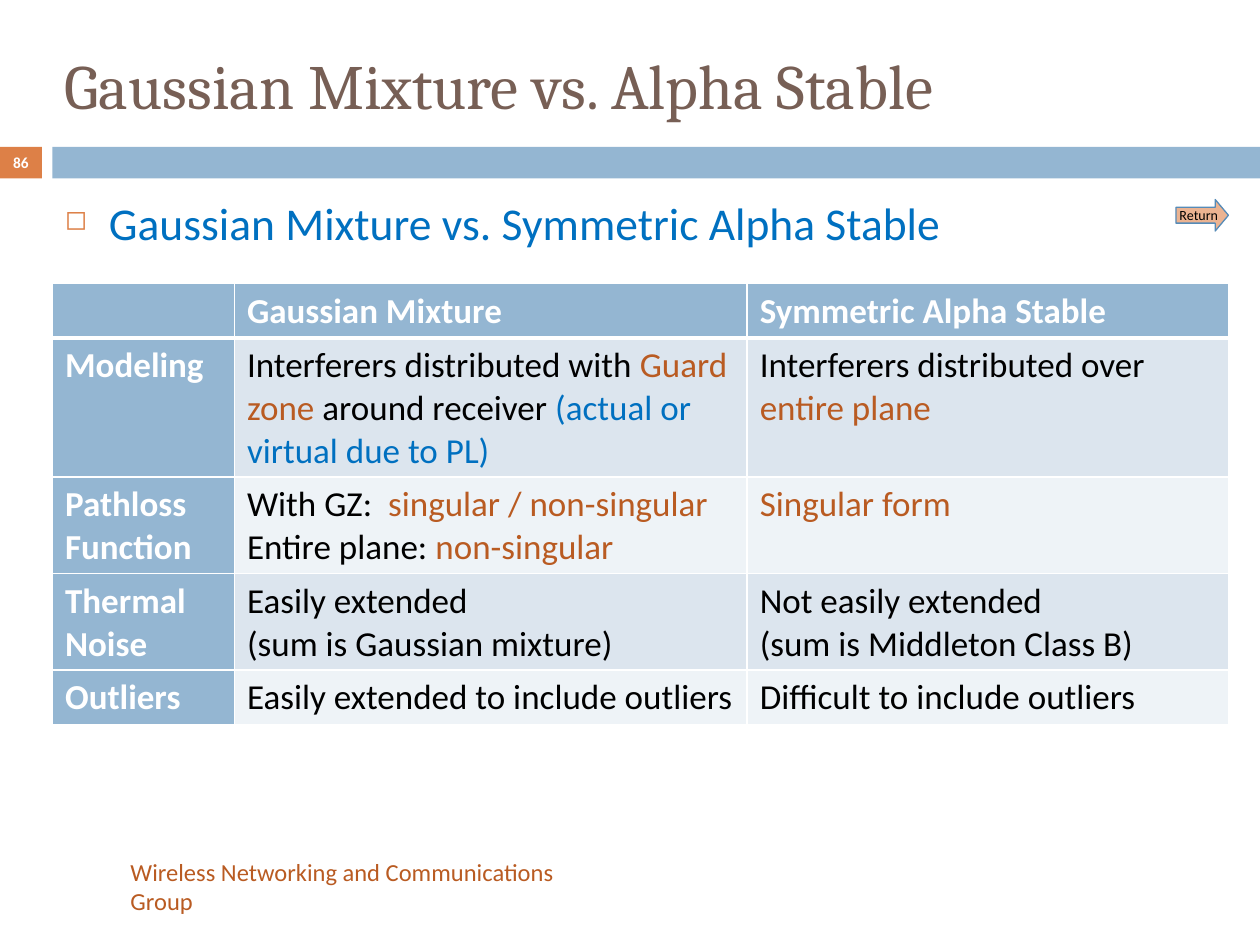
from dataclasses import dataclass

from lxml.etree import SubElement
from pptx import Presentation
from pptx.dml.color import RGBColor as RGB
from pptx.enum.shapes import MSO_SHAPE as SHAPE
from pptx.enum.text import MSO_ANCHOR as ANCHOR, PP_ALIGN as ALIGN
from pptx.oxml import parse_xml
from pptx.oxml.ns import nsdecls, qn
from pptx.util import Pt


@dataclass(frozen=True)
class Theme:
    head_font: str = "Cambria"
    body_font: str = "Calibri"
    title: str = "775F55"
    white: str = "FFFFFF"
    black: str = "000000"
    blue: str = "0070C0"
    rust: str = "B95B22"
    orange: str = "DD8047"
    bar: str = "94B6D2"
    bands: tuple = ("DCE5EE", "EEF3F7")
    arrow: str = "EBB391"
    arrow_line: str = "558BB8"
    title_size: float = 36
    body_size: float = 26
    table_size: float = 20
    footer_size: float = 14
    number_size: float = 8.8
    return_size: float = 8


T = Theme()

COLUMNS = (104, 293, 275)
ROW_HEIGHT = 29.5
ROWS = [
    ["", "Gaussian Mixture", "Symmetric Alpha Stable"],
    ["Modeling",
     [["Interferers distributed with ", ("Guard zone ", T.rust),
       "around receiver ", ("(actual or virtual due to PL)", T.blue)]],
     [["Interferers distributed over ", ("entire plane", T.rust)]]],
    ["Pathloss Function",
     [["With GZ:  ", ("singular / non-singular", T.rust)],
      ["Entire plane: ", ("non-singular", T.rust)]],
     [[("Singular form", T.rust)]]],
    ["Thermal Noise",
     "Easily extended\v(sum is Gaussian mixture)",
     "Not easily extended\v(sum is Middleton Class B)"],
    ["Outliers", "Easily extended to include outliers",
     "Difficult to include outliers"],
]


def write(p, runs, size, color, bold=False, font=T.body_font):
    p.font.name = font
    p.font.size = Pt(size)
    p.font.bold = bold
    p.font.color.rgb = RGB.from_string(color)
    for item in runs:
        text, tint = (item, None) if isinstance(item, str) else item
        for i, line in enumerate(text.split("\v")):
            if i:
                p.add_line_break()
            r = p.add_run()
            r.text = line
            if tint:
                r.font.color.rgb = RGB.from_string(tint)


def add_text(s, box, text, size, color, anchor=ANCHOR.MIDDLE, inset=7.2, **style):
    tf = s.shapes.add_textbox(*map(Pt, box)).text_frame
    tf.word_wrap = True
    tf.vertical_anchor = anchor
    tf.margin_left = tf.margin_right = Pt(inset)
    p = tf.paragraphs[0]
    write(p, [text], size, color, **style)
    return p


def add_block(s, kind, box, fill, line=None):
    sp = s.shapes.add_shape(kind, *map(Pt, box))
    sp.shadow.inherit = False
    sp.fill.solid()
    sp.fill.fore_color.rgb = RGB.from_string(fill)
    if line:
        sp.line.color.rgb = RGB.from_string(line)
        sp.line.width = Pt(0.75)
    else:
        sp.line.fill.background()
    return sp


def add_bullet(s, box, text):
    p = add_text(s, box, "", T.body_size, T.blue, ANCHOR.TOP)
    p.clear()
    pPr = p._p.get_or_add_pPr()
    pPr.set("marL", str(Pt(25.2)))
    pPr.set("indent", str(-Pt(25.2)))
    bullet = (("buClr", f'<a:srgbClr val="{T.orange}"/>', ""),
              ("buSzPct", "", 'val="60000"'),
              ("buChar", "", 'char="◻"'))
    for i, (tag, inner, attrs) in enumerate(bullet):
        pPr.insert(i, parse_xml(
            f'<a:{tag} {nsdecls("a")} {attrs}>{inner}</a:{tag}>'))
    write(p, [text], T.body_size, T.blue)


def set_borders(cell, top, bottom):
    tcPr = cell._tc.get_or_add_tcPr()
    widths = {"lnL": 1, "lnR": 1, "lnT": top, "lnB": bottom}
    for i, (side, width) in enumerate(widths.items()):
        ln = SubElement(tcPr, qn(f"a:{side}"), w=str(Pt(width)))
        fill = SubElement(ln, qn("a:solidFill"))
        SubElement(fill, qn("a:srgbClr"), val=T.white)
        tcPr.insert(i, ln)


def fill_cell(cell, content, row, col):
    heading = row == 0 or col == 0
    cell.fill.solid()
    cell.fill.fore_color.rgb = RGB.from_string(
        T.bar if heading else T.bands[(row - 1) % 2])
    set_borders(cell, 3 if row == 1 else 1, 3 if row == 0 else 1)
    paragraphs = [[content]] if isinstance(content, str) else content
    tf = cell.text_frame
    for i, runs in enumerate(paragraphs):
        p = tf.add_paragraph() if i else tf.paragraphs[0]
        write(p, runs, T.table_size, T.white if heading else T.black, heading)


def add_comparison(s, left, top):
    table = s.shapes.add_table(
        len(ROWS), len(COLUMNS), Pt(left), Pt(top),
        Pt(sum(COLUMNS)), Pt(ROW_HEIGHT * len(ROWS))).table
    table.first_col = True
    for column, width in zip(table.columns, COLUMNS):
        column.width = Pt(width)
    for i, row in enumerate(ROWS):
        table.rows[i].height = Pt(ROW_HEIGHT)
        for j, content in enumerate(row):
            fill_cell(table.cell(i, j), content, i, j)


def add_return_arrow(s, box):
    sp = add_block(s, SHAPE.RIGHT_ARROW, box, T.arrow, T.arrow_line)
    sp.adjustments[0] = 0.5
    sp.adjustments[1] = 0.42
    tf = sp.text_frame
    tf.word_wrap = False
    tf.vertical_anchor = ANCHOR.MIDDLE
    p = tf.paragraphs[0]
    p.alignment = ALIGN.CENTER
    write(p, ["Return"], T.return_size, T.black)


def main():
    prs = Presentation()
    prs.slide_width, prs.slide_height = Pt(720), Pt(540)
    s = prs.slides.add_slide(prs.slide_layouts[6])
    add_block(s, SHAPE.RECTANGLE, (0, 84, 24, 18), T.orange)
    add_block(s, SHAPE.RECTANGLE, (30, 84, 690, 18), T.bar)
    add_text(s, (66, 492, 294, 28.8), "Wireless Networking and Communications Group",
             T.footer_size, T.rust, inset=8.6)
    add_text(s, (30, 18, 672, 60), "Gaussian Mixture vs. Alpha Stable",
             T.title_size, T.title, font=T.head_font)
    number = add_text(s, (0, 83, 24, 19.2), "86", T.number_size, T.white,
                      inset=0, bold=True)
    number.alignment = ALIGN.CENTER
    add_bullet(s, (30, 108, 672, 42), "Gaussian Mixture vs. Symmetric Alpha Stable")
    add_comparison(s, 30, 162)
    add_return_arrow(s, (672, 114, 30, 18))
    prs.save("out.pptx")


if __name__ == "__main__":
    main()
